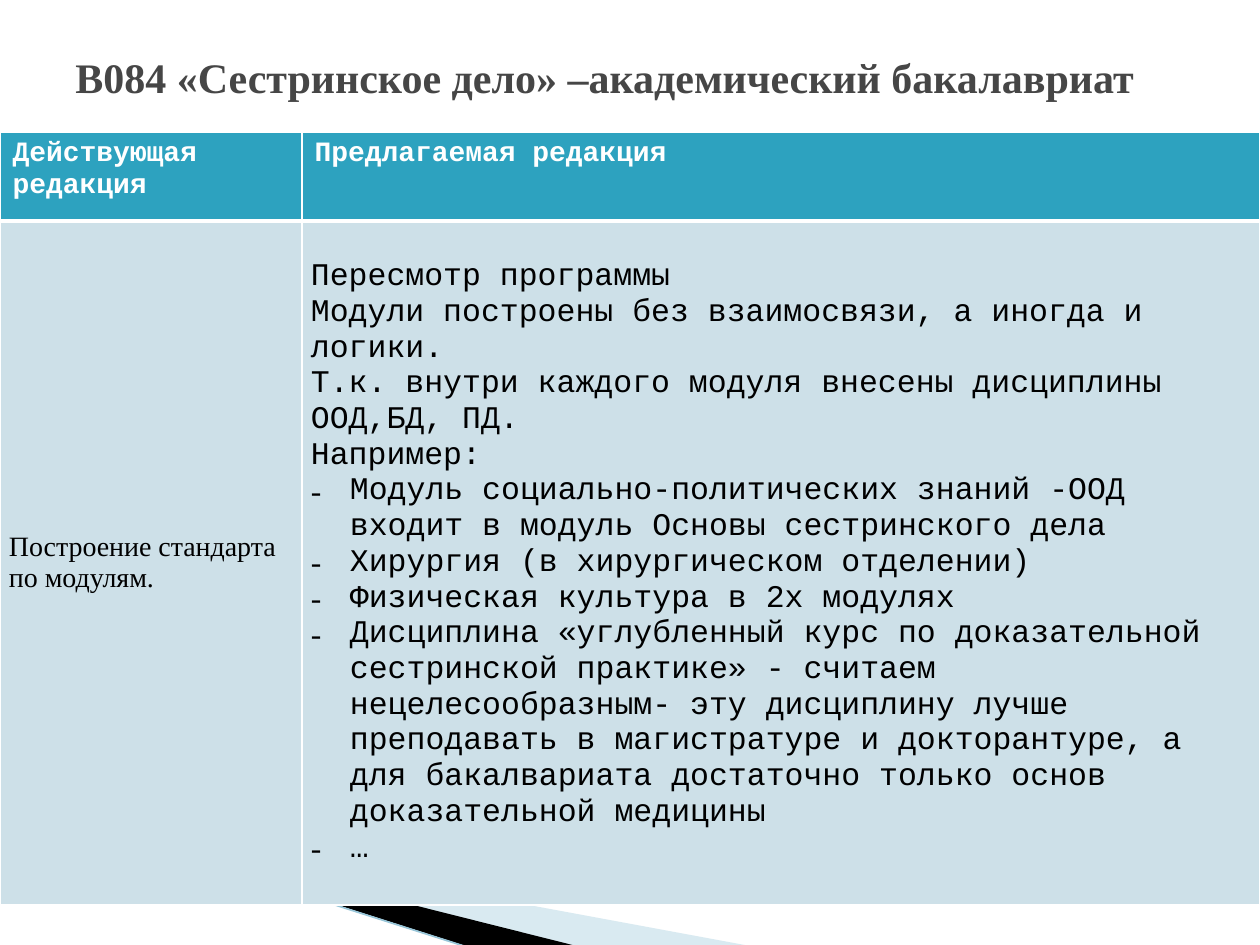
"""Builds the slide on proposed changes to the nursing bachelor's programme."""
from dataclasses import dataclass

from lxml.etree import SubElement
from pptx import Presentation
from pptx.dml.color import RGBColor
from pptx.enum.shapes import MSO_CONNECTOR as Connector
from pptx.enum.text import MSO_ANCHOR as Anchor
from pptx.oxml.ns import qn
from pptx.util import Pt

SCALE = 914400 / 126


@dataclass(frozen=True)
class Theme:
    title: str = "464646"
    header: str = "2DA2BF"
    body: str = "CDE0E8"
    white: str = "FFFFFF"
    black: str = "000000"
    pale: str = "A0CBDC"
    edge: str = "97C5D8"
    serif: str = "Times New Roman"
    mono: str = "Courier New"
    title_size: int = 24
    small_size: int = 16
    text_size: int = 18


THEME = Theme()
TITLE = "В084 «Сестринское дело» –академический бакалавриат"
HEADINGS = ["Действующая редакция", "Предлагаемая редакция"]
CURRENT = ["Построение стандарта по модулям."]
PROPOSAL = [
    "Пересмотр программы",
    "Модули построены без взаимосвязи, а иногда и логики.",
    "Т.к. внутри каждого модуля внесены дисциплины ООД,БД, ПД.",
    "Например:",
]
EXAMPLES = [
    "Модуль социально-политических знаний -ООД входит в модуль Основы сестринского дела",
    "Хирургия (в хирургическом отделении)",
    "Физическая культура в 2х модулях",
    "Дисциплина «углубленный курс по доказательной сестринской практике» - считаем "
    "нецелесообразным- эту дисциплину лучше преподавать в магистратуре и докторантуре, "
    "а для бакалвариата достаточно только основ доказательной медицины",
    "…",
]
COLUMNS = [302, 958]
ROWS = [89, 684]
WEDGES = [
    ([(69, 820), (750, 946), (575, 946), (69, 819)], THEME.pale, 40),
    ([(67, 818), (576, 946), (469, 947), (68, 819)], THEME.black, 100),
]
EDGE = (-1, 798, 467, 947)


def px(*lengths):
    return [round(length * SCALE) for length in lengths]


def rgb(code):
    return RGBColor.from_string(code)


def style(paragraph, face, size, colour, bold=False):
    font = paragraph.font
    font.name, font.size, font.bold = face, Pt(size), bold
    font.color.rgb = rgb(colour)


def add_wedge(shapes, points, colour, opacity):
    builder = shapes.build_freeform(*points[0], scale=SCALE)
    builder.add_line_segments(points[1:], close=True)
    wedge = builder.convert_to_shape()
    wedge.shadow.inherit = False
    wedge.fill.solid()
    wedge.fill.fore_color.rgb = rgb(colour)
    wedge.line.fill.background()
    if opacity < 100:
        tint = wedge.fill._xPr.find(".//" + qn("a:srgbClr"))
        SubElement(tint, qn("a:alpha"), val=str(opacity * 1000))


def add_backdrop(shapes):
    for wedge in WEDGES:
        add_wedge(shapes, *wedge)
    edge = shapes.add_connector(Connector.STRAIGHT, *px(*EDGE))
    edge.line.color.rgb = rgb(THEME.edge)
    edge.line.width = Pt(0.95)
    SubElement(edge._element.spPr, qn("a:effectLst"))


def add_title(shapes):
    title = shapes.add_textbox(*px(63, 18, 1134, 118)).text_frame
    title.word_wrap = True
    title.vertical_anchor = Anchor.MIDDLE
    title.text = TITLE
    style(title.paragraphs[0], THEME.serif, THEME.title_size, THEME.title, True)


def add_bullet(paragraph):
    indent = px(39)[0]
    properties = paragraph._p.get_or_add_pPr()
    properties.set("marL", str(indent))
    properties.set("indent", str(-indent))
    SubElement(properties, qn("a:buFont"), typeface=THEME.serif)
    SubElement(properties, qn("a:buChar"), char="-")


def paint(cell, colour, borders):
    properties = cell._tc.get_or_add_tcPr()
    for side, width in borders.items():
        border = SubElement(properties, qn("a:ln" + side), w=str(Pt(width)))
        SubElement(SubElement(border, qn("a:solidFill")), qn("a:srgbClr"), val=THEME.white)
    cell.fill.solid()
    cell.fill.fore_color.rgb = rgb(colour)


def fill_body(cell, lines, face, size, bulleted=()):
    cell.vertical_anchor = Anchor.MIDDLE
    cell.margin_left = cell.margin_right = px(9)[0]
    cell.margin_top = cell.margin_bottom = 0
    cell.text_frame.text = "\n".join([*lines, *bulleted])
    for number, paragraph in enumerate(cell.text_frame.paragraphs):
        if number >= len(lines):
            add_bullet(paragraph)
        style(paragraph, face, size, THEME.black)
    paint(cell, THEME.body, {"L": 1, "R": 1, "T": 3, "B": 1})


def add_comparison(shapes):
    frame = shapes.add_table(len(ROWS), len(COLUMNS), *px(0, 132, sum(COLUMNS), sum(ROWS)))
    table = frame.table
    table.first_row = table.horz_banding = False
    for column, width in zip(table.columns, px(*COLUMNS)):
        column.width = width
    for row, height in zip(table.rows, px(*ROWS)):
        row.height = height
    for cell, heading in zip(table.rows[0].cells, HEADINGS):
        cell.text_frame.text = heading
        style(cell.text_frame.paragraphs[0], THEME.mono, THEME.small_size, THEME.white, True)
        paint(cell, THEME.header, {"L": 1, "R": 1, "T": 1, "B": 3})
    fill_body(table.cell(1, 0), CURRENT, THEME.serif, THEME.small_size)
    fill_body(table.cell(1, 1), PROPOSAL, THEME.mono, THEME.text_size, EXAMPLES)


def main():
    deck = Presentation()
    deck.slide_width, deck.slide_height = px(1260, 945)
    shapes = deck.slides.add_slide(deck.slide_layouts[6]).shapes
    add_backdrop(shapes)
    add_title(shapes)
    add_comparison(shapes)
    deck.save("out.pptx")


if __name__ == "__main__":
    main()
